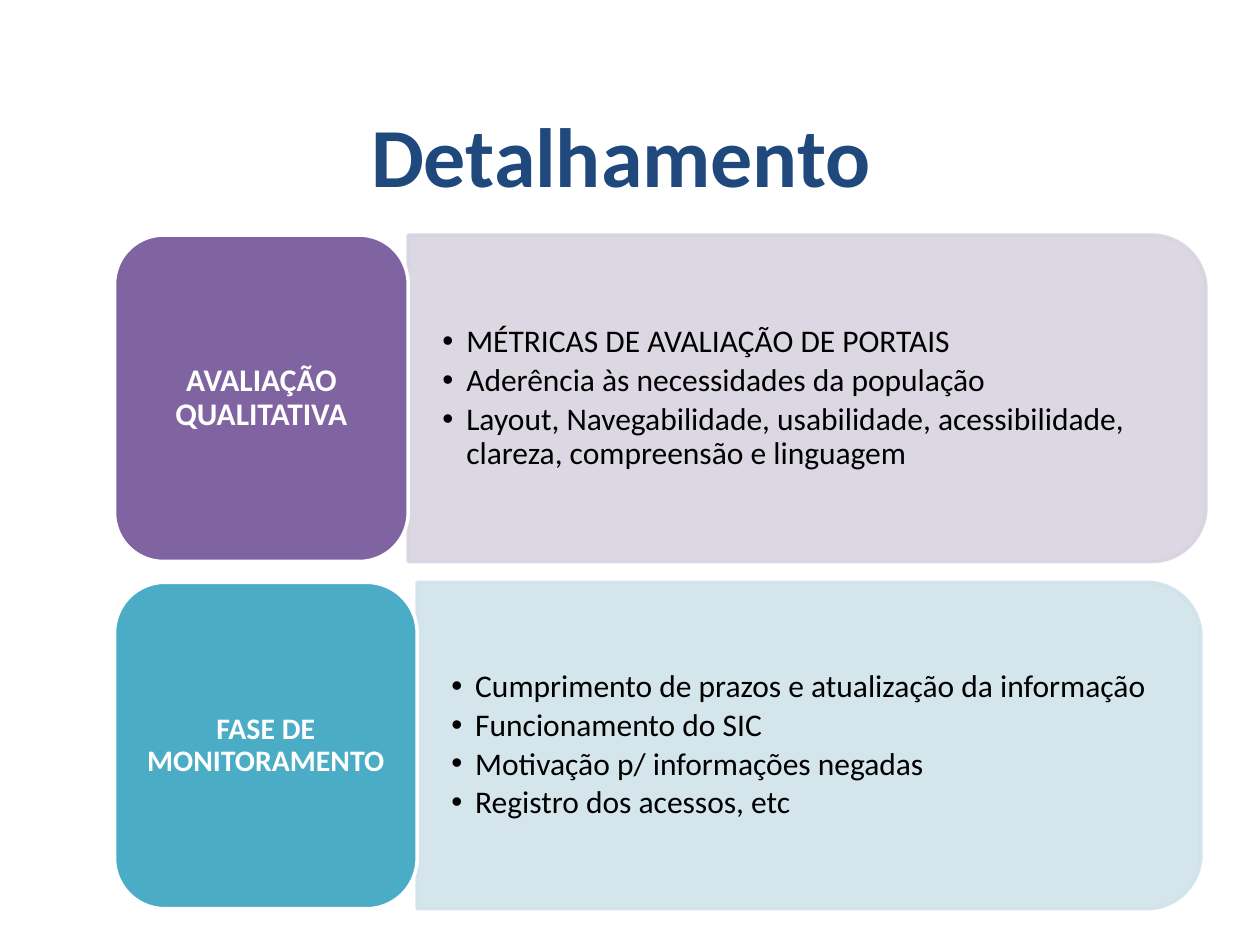
from dataclasses import dataclass

from lxml.etree import SubElement
from pptx import Presentation
from pptx.dml.color import RGBColor
from pptx.enum.shapes import MSO_SHAPE
from pptx.enum.text import MSO_ANCHOR, MSO_AUTO_SIZE, PP_ALIGN
from pptx.oxml.ns import qn
from pptx.util import Cm, Pt

COLORS = {
    "title": "1F497D",
    "text": "000000",
    "white": "FFFFFF",
    "purple": "8064A2",
    "pale purple": "D8D3E0",
    "teal": "4BACC6",
    "pale teal": "D0E3EA",
}
FONT = "Calibri"
LABEL_LEFT = 2.31
FIRST_TOP = 4.74
ROW_STEP = 7.0
ROW_HEIGHT = 6.58
LIST_MARGIN = 0.33
BULLET_INDENT = 0.48


@dataclass
class Phase:
    label: str
    label_size: int
    label_width: float
    panel_width: float
    color: str
    panel_color: str
    items: list[str]


PHASES = [
    Phase("AVALIAÇÃO QUALITATIVA", 18, 5.92, 16.08, "purple", "pale purple", [
        "MÉTRICAS DE AVALIAÇÃO DE PORTAIS",
        "Aderência às necessidades da população",
        "Layout, Navegabilidade, usabilidade, acessibilidade, "
        "clareza, compreensão e linguagem",
    ]),
    Phase("FASE DE MONITORAMENTO", 17, 6.1, 15.8, "teal", "pale teal", [
        "Cumprimento de prazos e atualização da informação",
        "Funcionamento do SIC",
        "Motivação p/ informações negadas",
        "Registro dos acessos, etc",
    ]),
]


def rgb(name: str) -> RGBColor:
    return RGBColor.from_string(COLORS[name])


def place(box, left: float, top: float, width: float, height: float) -> None:
    box.left, box.top = Cm(left), Cm(top)
    box.width, box.height = Cm(width), Cm(height)


def set_frame(frame, side: float, edge: float) -> None:
    frame.word_wrap = True
    frame.auto_size = MSO_AUTO_SIZE.NONE
    frame.vertical_anchor = MSO_ANCHOR.MIDDLE
    frame.margin_left = frame.margin_right = Cm(side)
    frame.margin_top = frame.margin_bottom = Cm(edge)


def add_span(para, text: str, size: int, color: str, bold: bool = False) -> None:
    span = para.add_run()
    span.text = text
    span.font.name = FONT
    span.font.size = Pt(size)
    span.font.bold = bold
    span.font.color.rgb = rgb(color)


def add_block(slide, kind, fill: str, line: str):
    block = slide.shapes.add_shape(kind, 0, 0, 0, 0)
    block.shadow.inherit = False
    block.fill.solid()
    block.fill.fore_color.rgb = rgb(fill)
    block.line.color.rgb = rgb(line)
    block.line.width = Pt(2)
    return block


def add_panel(slide, phase: Phase, left: float, top: float) -> None:
    """Draw the pale panel, turned so that its rounded corners face right."""
    panel = add_block(slide, MSO_SHAPE.ROUND_2_SAME_RECTANGLE,
                      phase.panel_color, phase.panel_color)
    shift = (phase.panel_width - ROW_HEIGHT) / 2
    place(panel, left + shift, top - shift, ROW_HEIGHT, phase.panel_width)
    panel.rotation = 90
    for color in panel.element.spPr.iter(qn("a:srgbClr")):
        SubElement(color, qn("a:alpha"), val="90000")


def add_label(slide, phase: Phase, top: float) -> None:
    label = add_block(slide, MSO_SHAPE.ROUNDED_RECTANGLE, phase.color, "white")
    place(label, LABEL_LEFT, top, phase.label_width, ROW_HEIGHT)
    set_frame(label.text_frame, 0.18, 0.1)
    para = label.text_frame.paragraphs[0]
    para.alignment = PP_ALIGN.CENTER
    para.line_spacing = 0.9
    add_span(para, phase.label, phase.label_size, "white", bold=True)


def fill_list(body, phase: Phase, left: float, top: float) -> None:
    place(body, left, top + LIST_MARGIN, phase.panel_width - LIST_MARGIN,
          ROW_HEIGHT - 2 * LIST_MARGIN)
    frame = body.text_frame
    set_frame(frame, 0.69, 0.36)
    for index, item in enumerate(phase.items):
        para = frame.add_paragraph() if index else frame.paragraphs[0]
        para.level = 1
        para.line_spacing = 0.9
        para.space_before = Pt(0)
        para.space_after = Pt(2.7)
        properties = para._p.get_or_add_pPr()
        properties.set("marL", str(Cm(BULLET_INDENT)))
        properties.set("indent", str(-Cm(BULLET_INDENT)))
        SubElement(properties, qn("a:buChar"), char="•")
        add_span(para, item, 18, "text")


def main() -> None:
    deck = Presentation()
    deck.slide_width, deck.slide_height = Cm(25.4), Cm(19.05)
    slide = deck.slides.add_slide(deck.slide_layouts[3])
    title, *bodies = slide.placeholders

    place(title, 1.09, 1.93, 22.86, 2.36)
    set_frame(title.text_frame, 0.25, 0.13)
    heading = title.text_frame.paragraphs[0]
    heading.alignment = PP_ALIGN.CENTER
    add_span(heading, "Detalhamento", 48, "title", bold=True)

    for row, (phase, body) in enumerate(zip(PHASES, bodies)):
        top = FIRST_TOP + row * ROW_STEP
        panel_left = LABEL_LEFT + phase.label_width
        add_panel(slide, phase, panel_left, top)
        fill_list(body, phase, panel_left, top)
        body.element.getparent().append(body.element)  # above its panel
        add_label(slide, phase, top)

    deck.save("out.pptx")


if __name__ == "__main__":
    main()
